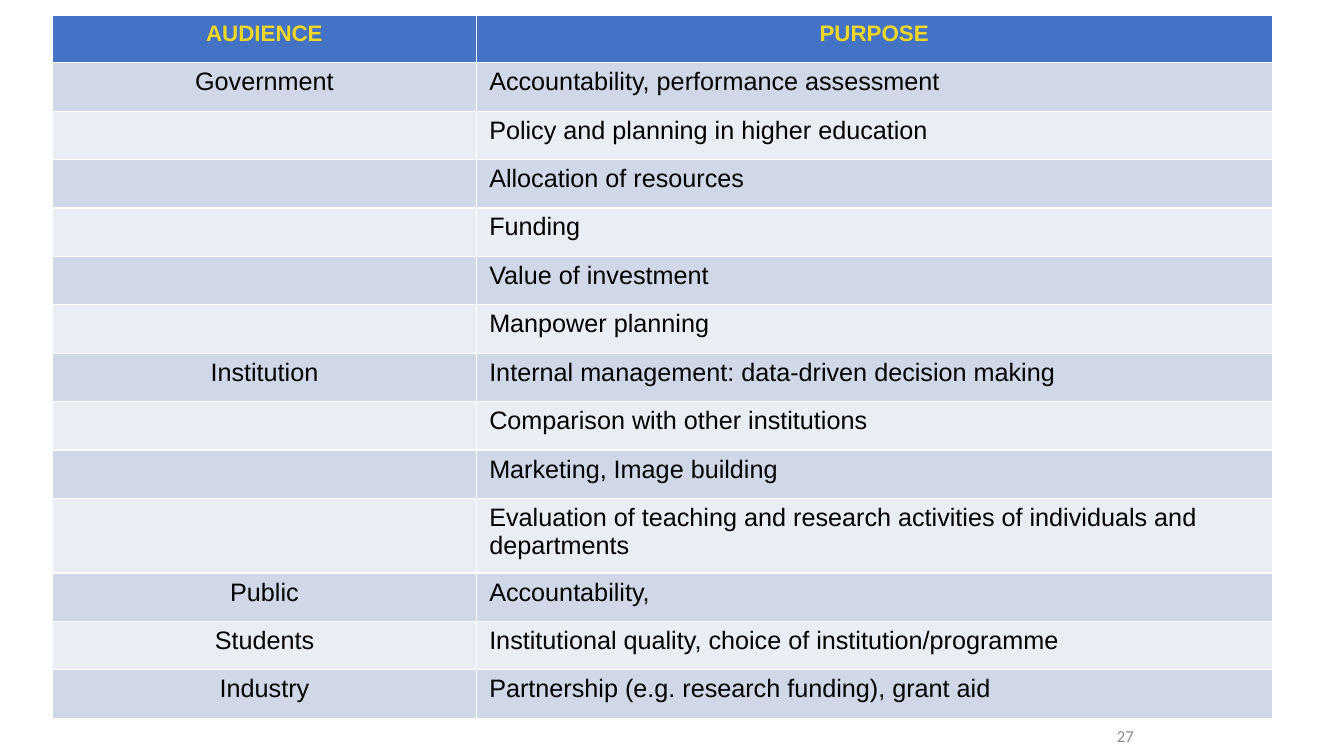
from typing import NamedTuple

from lxml.etree import SubElement
from pptx import Presentation
from pptx.dml.color import RGBColor
from pptx.enum.text import MSO_ANCHOR, PP_ALIGN
from pptx.oxml.ns import qn
from pptx.util import Cm, Pt

COLORS = {
    "header": "4472C4",
    "header_text": "EFD723",
    "odd": "D0D8E8",
    "even": "E9EDF4",
    "border": "FFFFFF",
    "text": "000000",
    "number": "8C8C8C",
}
HEADER_FONT = {"name": "Arial", "size": Pt(16), "bold": True}
BODY_FONT = {"name": "Arial", "size": Pt(18), "bold": False}
NUMBER_FONT = {"name": "Calibri", "size": Pt(12)}
CELL_FORMAT = {
    "margin_left": Cm(0.33),
    "margin_right": Cm(0.33),
    "margin_top": Cm(0.13),
    "margin_bottom": Cm(0.13),
}
COLUMN_WIDTHS = (10.67, 20.06)
HEADER_HEIGHT, ROW_HEIGHT, TALL_HEIGHT = 1.18, 1.22, 1.88


class Row(NamedTuple):
    audience: str
    purpose: str
    height: float = ROW_HEIGHT


ROWS = [
    Row("AUDIENCE", "PURPOSE", HEADER_HEIGHT),
    Row("Government", "Accountability, performance assessment"),
    Row("", "Policy and planning in higher education"),
    Row("", "Allocation of resources"),
    Row("", "Funding"),
    Row("", "Value of investment"),
    Row("", "Manpower planning"),
    Row("Institution", "Internal management: data-driven decision making"),
    Row("", "Comparison with other institutions"),
    Row("", "Marketing, Image building"),
    Row("", "Evaluation of teaching and research activities of individuals "
        "and departments", TALL_HEIGHT),
    Row("Public", "Accountability,"),
    Row("Students", "Institutional quality, choice of institution/programme"),
    Row("Industry", "Partnership (e.g. research funding), grant aid"),
]


def apply_format(target, values: dict) -> None:
    for name, value in values.items():
        setattr(target, name, value)


def write_text(tf, text: str, font: dict, color: str, align) -> None:
    p = tf.paragraphs[0]
    p.alignment = align
    r = p.add_run()
    r.text = text
    apply_format(r.font, font)
    r.font.color.rgb = RGBColor.from_string(COLORS[color])


def add_borders(cell) -> None:
    tc_pr = cell._tc.get_or_add_tcPr()
    for side in ("L", "R", "T", "B"):
        line = SubElement(tc_pr, qn(f"a:ln{side}"), w=str(Pt(1)))
        fill = SubElement(line, qn("a:solidFill"))
        SubElement(fill, qn("a:srgbClr"), val=COLORS["border"])


def format_cell(cell, text: str, row: int, col: int) -> None:
    apply_format(cell, CELL_FORMAT)
    add_borders(cell)
    band = "header" if row == 0 else "odd" if row % 2 else "even"
    cell.fill.solid()
    cell.fill.fore_color.rgb = RGBColor.from_string(COLORS[band])
    if text:
        font, color = (BODY_FONT, "text") if row else (HEADER_FONT, "header_text")
        centred = row == 0 or col == 0
        write_text(cell.text_frame, text, font, color,
                   PP_ALIGN.CENTER if centred else PP_ALIGN.LEFT)


def add_audience_table(s) -> None:
    height = sum(row.height for row in ROWS)
    table = s.shapes.add_table(
        len(ROWS), len(COLUMN_WIDTHS),
        Cm(1.33), Cm(0.4), Cm(sum(COLUMN_WIDTHS)), Cm(height)).table
    for column, width in zip(table.columns, COLUMN_WIDTHS):
        column.width = Cm(width)
    for i, row in enumerate(ROWS):
        table.rows[i].height = Cm(row.height)
        for j, text in enumerate((row.audience, row.purpose)):
            format_cell(table.cell(i, j), text, i, j)


def add_slide_number(s) -> None:
    sp = s.shapes.add_textbox(Cm(24.41), Cm(18.03), Cm(7.9), Cm(1.02))
    tf = sp.text_frame
    apply_format(tf, {"word_wrap": True, "vertical_anchor": MSO_ANCHOR.MIDDLE})
    write_text(tf, "27", NUMBER_FONT, "number", PP_ALIGN.CENTER)


def main() -> None:
    prs = Presentation()
    prs.slide_width, prs.slide_height = Cm(33.87), Cm(19.05)
    s = prs.slides.add_slide(prs.slide_layouts[6])
    add_audience_table(s)
    add_slide_number(s)
    prs.save("out.pptx")


if __name__ == "__main__":
    main()
